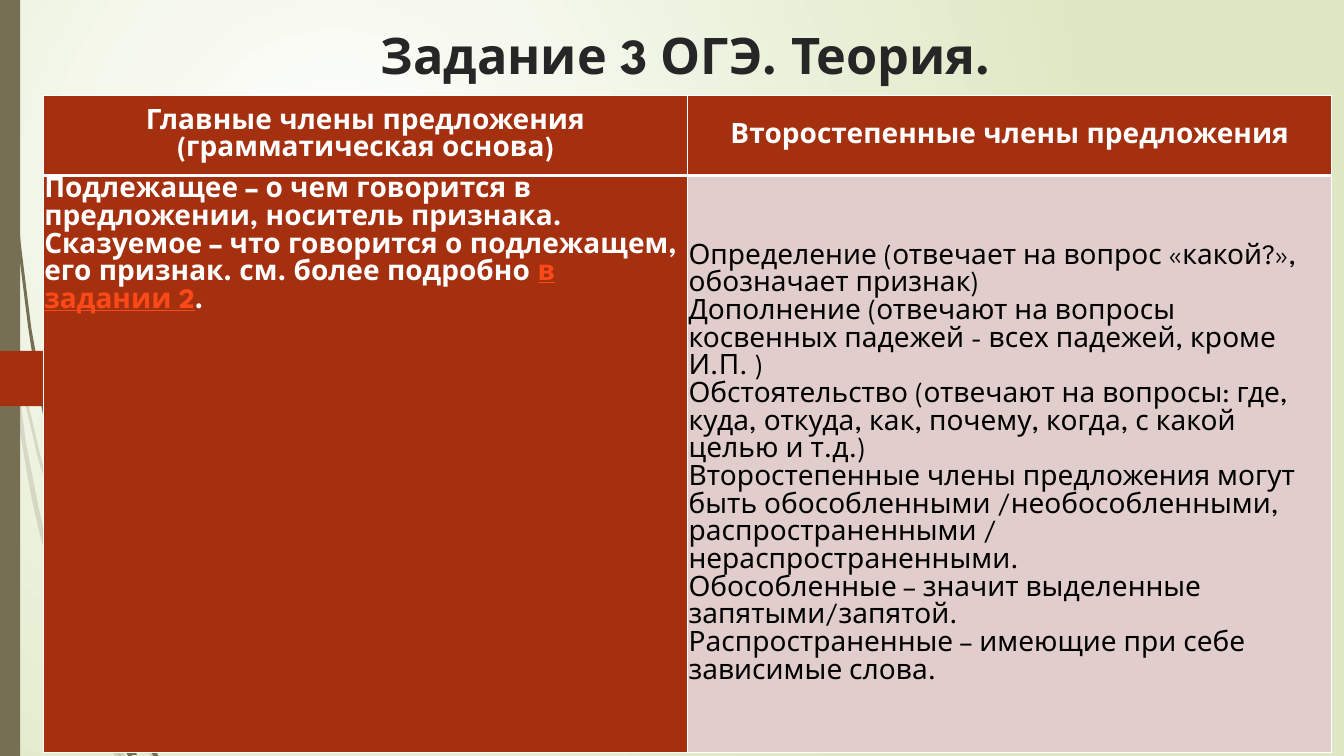
from copy import deepcopy
from lxml import etree
from pptx import Presentation
from pptx.dml.color import RGBColor
from pptx.enum.shapes import MSO_SHAPE
from pptx.enum.text import MSO_ANCHOR, PP_ALIGN
from pptx.util import Inches, Pt

RECT, TAB = MSO_SHAPE.RECTANGLE, MSO_SHAPE.PENTAGON
MID, LOW, TOP = MSO_ANCHOR.MIDDLE, MSO_ANCHOR.BOTTOM, MSO_ANCHOR.TOP
CENTER, LEFT = PP_ALIGN.CENTER, PP_ALIGN.LEFT
WHITE = RGBColor(0xFF, 0xFF, 0xFF)
BLACK = RGBColor(0, 0, 0)
INK = RGBColor(0x26, 0x26, 0x26)
GREEN = RGBColor(0xDF, 0xE8, 0xC4)
OLIVE = RGBColor(0x76, 0x6F, 0x54)
RUST = RGBColor(0xA5, 0x30, 0x10)
ROSE = RGBColor(0xE1, 0xCD, 0xCC)
FLAME = RGBColor(0xFB, 0x4A, 0x18)
A = "{http://schemas.openxmlformats.org/drawingml/2006/main}"
UNIT = Inches(0.01)
WIDE, HIGH = 1333 * UNIT, 750 * UNIT
STEPS = 12

deck = Presentation()
deck.slide_width, deck.slide_height = WIDE, HIGH
page = deck.slides.add_slide(deck.slide_layouts[6])

back = page.background.fill
back.gradient()
for stop, tone in zip(back.gradient_stops, (WHITE, GREEN)):
    stop.color.rgb = tone
grad = page._element.find(f".//{A}gradFill")
grad.remove(grad.find(f"{A}lin"))
glow = etree.SubElement(grad, f"{A}path", path="circle")
etree.SubElement(glow, f"{A}fillToRect", l="50000", t="50000", r="100000", b="100000")


def paint(shape, tone, alpha=100):
    shape.shadow.inherit = False
    shape.fill.solid()
    shape.fill.fore_color.rgb = tone
    shape.line.fill.background()
    if alpha < 100:
        shade = shape._element.spPr.find(f"{A}solidFill/{A}srgbClr")
        etree.SubElement(shade, f"{A}alpha", val=str(alpha * 1000))


def put(par, text, look):
    for n, part in enumerate(text.split("\n")):
        if n:
            par.add_line_break()
            par._p[-1].append(deepcopy(run._r.rPr))
        run = par.add_run()
        run.text = part
        for key, val in look.items():
            if key == "color":
                run.font.color.rgb = val
            else:
                setattr(run.font, key, val)


# tip, middle, foot, width
PALE = [
    ((14, 345), (43, 473), (84, 600), 3),
    ((88, 596), (115, 675), (150, 751), 5),
    ((105, 711), (112, 731), (119, 751), 5),
    ((11, 350), (40, 532), (101, 714), 5),
    ((84, 599), (88, 655), (105, 712), 4),
    ((312, 153), (158, 348), (85, 586), 3),
    ((101, 714), (107, 733), (114, 751), 5),
    ((93, 683), (104, 718), (119, 751), 2),
]
DARK = [
    ((3, 0), (18, 245), (57, 481), 3),
    ((60, 472), (82, 560), (106, 645), 4),
    ((110, 641), (129, 697), (152, 750), 5),
    ((57, 477), (77, 600), (117, 722), 6),
    ((70, 141), (52, 300), (55, 449), 3),
    ((122, 719), (127, 735), (133, 749), 3),
    ((260, 344), (156, 474), (106, 631), 4),
    ((117, 722), (121, 736), (127, 750), 4),
    ((106, 645), (109, 683), (122, 719), 4),
    ((110, 691), (119, 720), (130, 749), 3),
]
for blades, alpha in ((PALE, 20), (DARK, 100)):
    for tip, mid, foot, thick in blades:
        edge = []
        for n in range(1, STEPS + 1):
            t = n / STEPS
            a, b, c = (1 - t) * (1 - 2 * t), 4 * t * (1 - t), t * (2 * t - 1)
            edge.append([a * p + b * q + c * r for p, q, r in zip(tip, mid, foot)])
        pen = page.shapes.build_freeform(*tip, scale=UNIT)
        pen.add_line_segments(edge + [(x + thick, y) for x, y in reversed(edge)])
        paint(pen.convert_to_shape(), OLIVE, alpha)

paint(page.shapes.add_shape(RECT, 0, 0, 20 * UNIT, HIGH), OLIVE)
paint(page.shapes.add_shape(TAB, 0, 348 * UNIT, 174 * UNIT, 55 * UNIT), RUST)

BASE = {"name": "League Spartan", "size": Pt(20), "bold": True, "color": WHITE}
head = page.shapes.add_textbox(139 * UNIT, -9 * UNIT, 1083 * UNIT, 98 * UNIT).text_frame
head.word_wrap, head.vertical_anchor = True, LOW
head.paragraphs[0].alignment = CENTER
put(head.paragraphs[0], "Задание 3 ОГЭ. Теория.", BASE | {"size": Pt(36), "color": INK})

MAIN = """Подлежащее – о чем говорится в предложении, носитель признака.
Сказуемое – что говорится о подлежащем, его признак. см. более подробно """
MINOR = """Определение (отвечает на вопрос «какой?», обозначает признак) 
Дополнение (отвечают на вопросы косвенных падежей - всех падежей, кроме И.П. ) 
Обстоятельство (отвечают на вопросы: где, куда, откуда, как, почему, когда, с какой целью и т.д.) 
Второстепенные члены предложения могут быть обособленными /необособленными, распространенными / нераспространенными.
Обособленные – значит выделенные запятыми/запятой.
Распространенные – имеющие при себе зависимые слова."""
LINK = {"color": FLAME, "underline": True}
PLAIN = {"color": BLACK, "bold": False}
CELLS = [
    (0, 0, RUST, MID, CENTER, [("Главные члены предложения (грамматическая основа)", {})]),
    (0, 1, RUST, MID, CENTER, [("Второстепенные члены предложения", {})]),
    (1, 0, RUST, TOP, LEFT, [(MAIN, {}), ("в задании 2", LINK), (".", {})]),
    (1, 1, ROSE, MID, LEFT, [(MINOR, PLAIN)]),
]
frame = page.shapes.add_table(2, 2, 43 * UNIT, 95 * UNIT, 1278 * UNIT, 615 * UNIT)
grid = frame.table
grid.first_col, grid.horz_banding = True, False
for row, tall in zip(grid.rows, (79, 536)):
    row.height = tall * UNIT
frame.height = 652 * UNIT
for row, col, tone, hold, side, parts in CELLS:
    cell = grid.cell(row, col)
    cell.vertical_anchor = hold
    for edge in ("left", "top", "right", "bottom"):
        setattr(cell, f"margin_{edge}", UNIT)
    for tag in ("lnL", "lnR", "lnT", "lnB"):
        thick = 3 if (row, tag) in ((0, "lnB"), (1, "lnT")) else 1
        rule = etree.SubElement(cell._tc.tcPr, f"{A}{tag}", w=str(Pt(thick)))
        ink = etree.SubElement(rule, f"{A}solidFill")
        etree.SubElement(ink, f"{A}srgbClr", val=str(WHITE))
    cell.fill.solid()
    cell.fill.fore_color.rgb = tone
    par = cell.text_frame.paragraphs[0]
    par.alignment, par.line_spacing = side, 1.07
    for text, look in parts:
        put(par, text, BASE | look)

deck.save("out.pptx")
